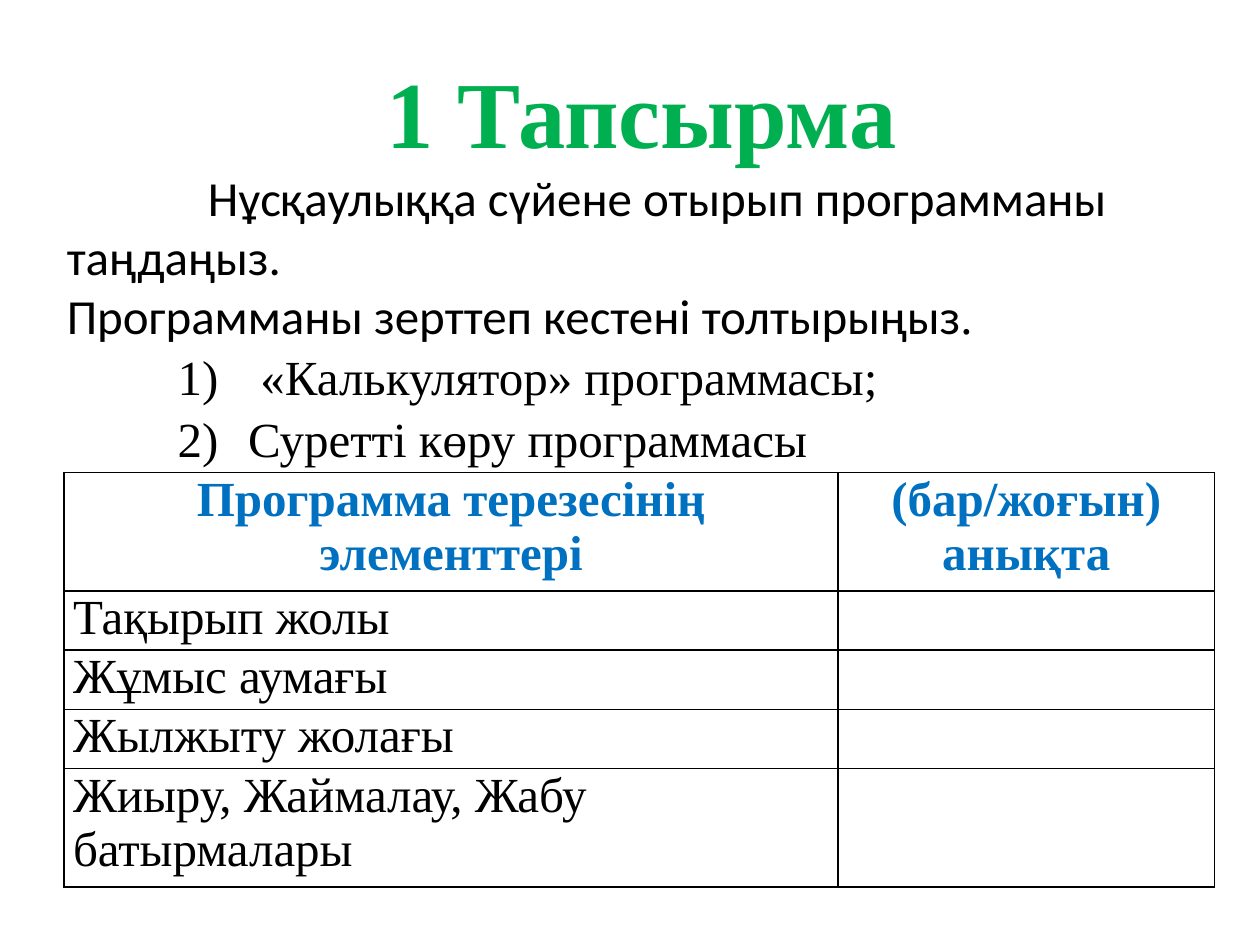
from pptx import Presentation
from pptx.dml.color import RGBColor
from pptx.enum import text
from pptx.oxml import parse_xml
from pptx.oxml.ns import nsdecls
from pptx.util import Inches, Pt

COLORS = {"title": "00B050", "header": "0070C0", "ink": "000000"}
SERIF, SANS = "Times New Roman", "Calibri"
LEFT, CENTER = text.PP_ALIGN.LEFT, text.PP_ALIGN.CENTER


class SlideBuilder:
    """Holds the text style and the current slide."""

    size = Pt(28)

    def __init__(self, presentation):
        self.slide = presentation.slides.add_slide(presentation.slide_layouts[1])

    def apply(self, target, values):
        for name, value in values.items():
            setattr(target, name, value)

    def place(self, shape, left, top, width, height):
        box = dict(left=left, top=top, width=width, height=height)
        self.apply(shape, {name: Inches(value) for name, value in box.items()})

    def add_run(self, paragraph, words, font=SERIF, color="ink", **values):
        run = paragraph.add_run()
        run.text = words
        self.apply(run.font, {"name": font, "size": self.size, "bold": False, **values})
        run.font.color.rgb = RGBColor.from_string(COLORS[color])

    def add_title(self, words, *box):
        title = self.slide.shapes.title
        self.place(title, *box)
        self.apply(title.text_frame, {
            "auto_size": text.MSO_AUTO_SIZE.NONE,
            "vertical_anchor": text.MSO_ANCHOR.BOTTOM,
        })
        paragraph = title.text_frame.paragraphs[0]
        self.apply(paragraph, {"alignment": CENTER, "line_spacing": 1.07})
        self.add_run(paragraph, words, color="title", size=Pt(54), bold=True)

    def add_body(self, items, *box):
        """Each item: runs, left margin, first-line indent, space before, numbered."""
        body = self.slide.placeholders[1]
        self.place(body, *box)
        frame = body.text_frame
        self.apply(frame, {
            "auto_size": text.MSO_AUTO_SIZE.NONE,
            "vertical_anchor": text.MSO_ANCHOR.TOP,
            "margin_top": Inches(0.18),
        })
        for index, (runs, margin, indent, before, numbered) in enumerate(items):
            paragraph = frame.add_paragraph() if index else frame.paragraphs[0]
            self.apply(paragraph, {
                "level": int(numbered), "alignment": LEFT,
                "line_spacing": 1.0, "space_before": Pt(before),
            })
            for words, font in runs:
                self.add_run(paragraph, words, font)
            self.set_bullet(paragraph, margin, indent, numbered)

    def set_bullet(self, paragraph, margin, indent, numbered):
        properties = paragraph._p.get_or_add_pPr()
        properties.set("marL", str(Inches(margin)))
        properties.set("indent", str(Inches(indent)))
        if numbered:
            marks = [f'buFont {nsdecls("a")} typeface="{SERIF}"',
                     f'buAutoNum {nsdecls("a")} type="arabicParenR"']
        else:
            marks = [f'buNone {nsdecls("a")}']
        for mark in marks:
            properties.append(parse_xml(f"<a:{mark}/>"))

    def add_table(self, rows, widths, heights, left, top):
        frame = self.slide.shapes.add_table(
            len(rows), len(widths), Inches(left), Inches(top),
            Inches(sum(widths)), Inches(sum(heights)))
        table = frame.table
        self.apply(table, {"first_row": False, "horz_banding": False})
        for column, width in zip(table.columns, widths):
            column.width = Inches(width)
        for row_index, (row, height) in enumerate(zip(rows, heights)):
            table.rows[row_index].height = Inches(height)
            for column_index, words in enumerate(row):
                cell = table.cell(row_index, column_index)
                self.fill_cell(cell, words, header=row_index == 0)

    def fill_cell(self, cell, words, header):
        self.apply(cell, {
            "margin_left": Inches(0.07), "margin_right": Inches(0.07),
            "margin_top": 0, "margin_bottom": 0,
        })
        properties = cell._tc.get_or_add_tcPr()
        for side in "LRTB":
            properties.append(parse_xml(
                f'<a:ln{side} {nsdecls("a")} w="{Pt(1)}"><a:solidFill>'
                f'<a:srgbClr val="{COLORS["ink"]}"/></a:solidFill></a:ln{side}>'))
        cell.fill.background()
        if words:
            paragraph = cell.text_frame.paragraphs[0]
            paragraph.alignment = CENTER if header else LEFT
            self.add_run(paragraph, words, color="header" if header else "ink",
                         bold=header)


def main():
    presentation = Presentation()
    presentation.slide_width = Inches(10)
    presentation.slide_height = Inches(7.5)
    builder = SlideBuilder(presentation)

    # Heading
    builder.add_title(" 1 Тапсырма", 0.5, 0.62, 9, 0.76)

    # Instructions and numbered programs
    builder.add_body([
        ([("Нұсқаулыққа сүйене отырып программаны таңдаңыз.", SANS)],
         0, 1.12, 0, False),
        ([("Программаны зерттеп кестені толтырыңыз", SANS), (".", SERIF)],
         0, 0, 0, False),
        ([(" «Калькулятор» программасы;", SERIF)], 1.44, -0.56, 1.5, True),
        ([("Суретті көру программасы", SERIF)], 1.44, -0.56, 1.5, True),
    ], 0.43, 1.15, 9.22, 5.66)

    # Table of window elements
    builder.add_table([
        ("Программа терезесінің элементтері", "(бар/жоғын) анықта"),
        ("Тақырып жолы", ""),
        ("Жұмыс аумағы", ""),
        ("Жылжыту жолағы", ""),
        ("Жиыру, Жаймалау, Жабу батырмалары", ""),
    ], [6.14, 2.99], [0.94, 0.47, 0.47, 0.47, 0.94], 0.51, 3.75)

    presentation.save("out.pptx")


if __name__ == "__main__":
    main()
